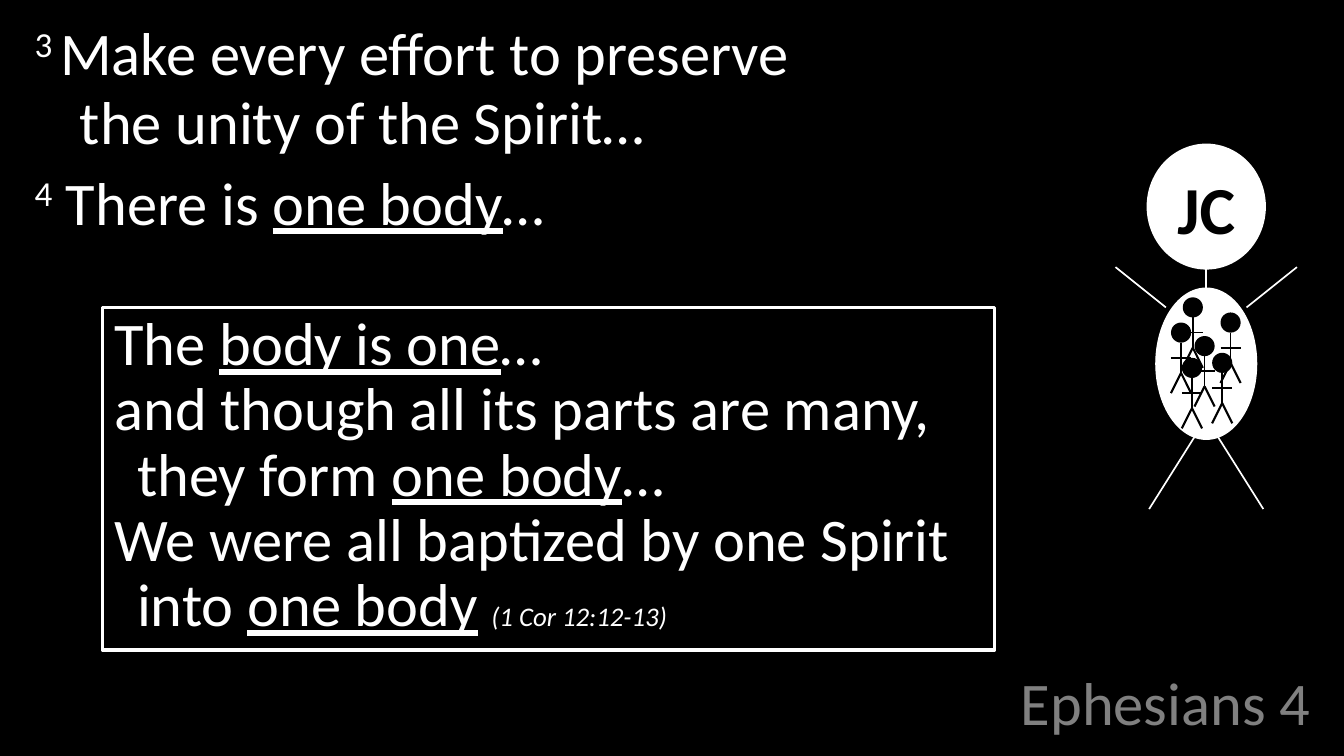
from lxml import etree
from pptx import Presentation
from pptx.dml.color import RGBColor
from pptx.enum.shapes import MSO_CONNECTOR, MSO_SHAPE
from pptx.enum.text import MSO_ANCHOR, PP_ALIGN
from pptx.oxml.ns import qn
from pptx.util import Pt

OVAL, RECTANGLE = MSO_SHAPE.OVAL, MSO_SHAPE.RECTANGLE
STRAIGHT = MSO_CONNECTOR.STRAIGHT
LEFT, CENTER, RIGHT = PP_ALIGN.LEFT, PP_ALIGN.CENTER, PP_ALIGN.RIGHT
TOP, BOTTOM = MSO_ANCHOR.TOP, MSO_ANCHOR.BOTTOM
FONT, BLACK, WHITE, GRAY = "Calibri", "000000", "FFFFFF", "808080"

# Content: each paragraph is a list of (text, style) runs; "\n" breaks the line
TITLE = [[("Ephesians 4", "")]]
VERSES = [
    [("3 ", "super"), ("Make every effort to preserve \nthe unity of the Spirit…", "")],
    [("4", "super"), (" There is ", ""), ("one body", "underline"), ("…", "")],
]
QUOTE = [
    [("The ", ""), ("body is one", "underline"), ("…", "")],
    [("and though all its parts are many, \nthey form ", ""),
     ("one body", "underline"), ("…", "")],
    [("We were all baptized by one Spirit \ninto ", ""), ("one body", "underline"),
     (" ", ""), ("(1 Cor 12:12-13)", "citation")],
]
HEAD_LABEL = [[("JC", "bold")]]

# Large figure: ovals as left, top, width, height; limbs as x1, y1, x2, y2
HEAD = (684, 87, 68, 72)
TORSO = (688, 171.5, 60, 90)
LIMBS = [
    (718, 159, 718, 249),
    (718, 249, 752, 303), (718, 249, 684, 303),
    (664, 159, 694, 183), (772, 159, 742, 183),
]

# Small figures: left and top of each head; limbs relative to it, with width
MEMBERS = [(711, 200), (726.5, 186), (697, 192), (721.5, 210), (703.5, 213), (704, 177)]
MEMBER_HEAD = 12
MEMBER_LIMBS = [
    (6, 12, 6, 30, 1),
    (6, 30, 12, 42, 1.25), (6, 30, 0, 42, 1.25),
    (0, 21, 12, 21, 1),
]


def color(value):
    return RGBColor.from_string(value)


def points(*values):
    return [Pt(value) for value in values]


def add_run(paragraph, text, style, size, text_color):
    run = paragraph.add_run()
    run.text = text
    font = run.font
    font.name = FONT
    font.size = Pt(16 if style == "citation" else size)
    font.color.rgb = color(text_color)
    font.underline = style == "underline"
    font.italic = style == "citation"
    font.bold = style == "bold"
    if style == "super":
        run._r.get_or_add_rPr().set("baseline", "30000")


def write(shape, paragraphs, size=36, text_color=WHITE, align=LEFT, anchor=TOP,
          spacing=1.0, before=0, hanging=0):
    frame = shape.text_frame
    frame.word_wrap = True
    frame.vertical_anchor = anchor
    for index, runs in enumerate(paragraphs):
        paragraph = frame.add_paragraph() if index else frame.paragraphs[0]
        paragraph.alignment = align
        paragraph.line_spacing = spacing
        paragraph.space_before = Pt(before)
        properties = paragraph._p.get_or_add_pPr()
        properties.set("marL", str(Pt(hanging)))
        properties.set("indent", str(Pt(-hanging)))
        for text, style in runs:
            for number, line in enumerate(text.split("\n")):
                if number:
                    paragraph.add_line_break()
                add_run(paragraph, line, style, size, text_color)


def add_shape(shapes, kind, box, fill, line=None, width=1):
    shape = shapes.add_shape(kind, *points(*box))
    shape.shadow.inherit = False
    shape.fill.solid()
    shape.fill.fore_color.rgb = color(fill)
    if line:
        shape.line.color.rgb = color(line)
        shape.line.width = Pt(width)
    else:
        shape.line.fill.background()
    return shape


def add_line(shapes, ends, line, width):
    connector = shapes.add_connector(STRAIGHT, *points(*ends))
    connector.line.color.rgb = color(line)
    connector.line.width = Pt(width)
    etree.SubElement(connector._element.spPr, qn("a:effectLst"))


presentation = Presentation()
presentation.slide_width, presentation.slide_height = points(800, 450)
slide = presentation.slides.add_slide(presentation.slide_layouts[6])
slide.background.fill.solid()
slide.background.fill.fore_color.rgb = color(BLACK)

# Title and verses
title = slide.shapes.add_textbox(*points(508, 400, 279, 42.5))
write(title, TITLE, text_color=GRAY, align=RIGHT, anchor=BOTTOM, spacing=0.8)
verses = slide.shapes.add_textbox(*points(13.5, 8.5, 773, 381))
write(verses, VERSES, spacing=0.95, before=7, hanging=27)

# Large figure
figure = slide.shapes.add_group_shape().shapes
add_shape(figure, OVAL, HEAD, WHITE, WHITE, 3)
for limb in LIMBS:
    add_line(figure, limb, WHITE, 1)
add_shape(figure, OVAL, TORSO, WHITE, WHITE, 0.75)
label = slide.shapes.add_textbox(*points(679, 96, 78, 55.5))
write(label, HEAD_LABEL, size=40, text_color=BLACK, align=CENTER)

# Small figures inside the torso
for left, top in MEMBERS:
    member = slide.shapes.add_group_shape().shapes
    add_shape(member, OVAL, (left, top, MEMBER_HEAD, MEMBER_HEAD), BLACK)
    for x1, y1, x2, y2, width in MEMBER_LIMBS:
        add_line(member, (left + x1, top + y1, left + x2, top + y2), BLACK, width)

# Framed quotation
quote = add_shape(slide.shapes, RECTANGLE, (61, 183, 531, 204), BLACK, WHITE, 2)
write(quote, QUOTE, spacing=0.9, hanging=13.5)

presentation.save("out.pptx")
